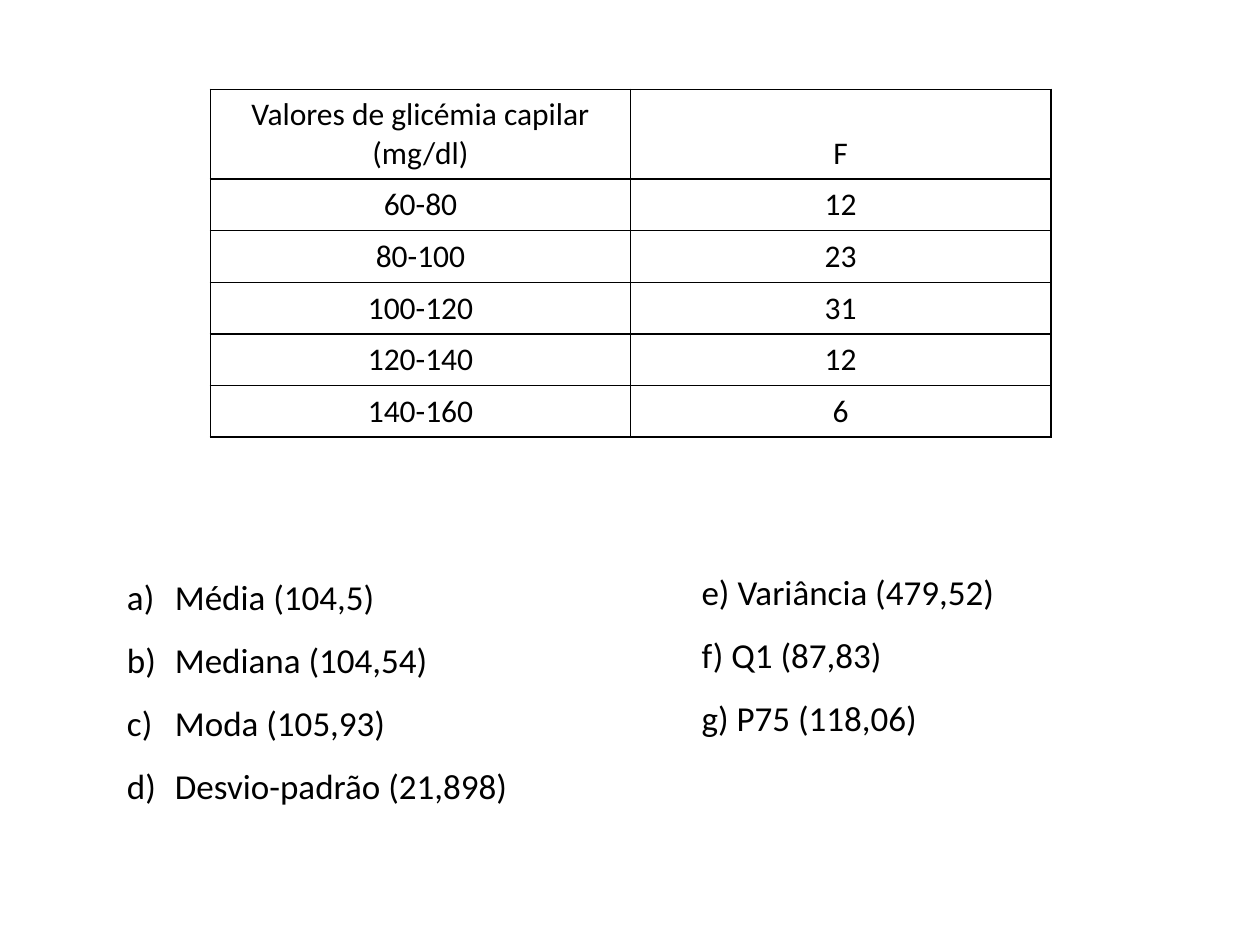
from lxml import etree
from pptx import Presentation
from pptx.dml.color import RGBColor
from pptx.enum.text import MSO_ANCHOR, MSO_AUTO_SIZE, PP_ALIGN
from pptx.oxml.ns import qn
from pptx.util import Inches, Pt

BLACK = RGBColor(0x00, 0x00, 0x00)
CENTER = PP_ALIGN.CENTER
LEFT = PP_ALIGN.LEFT
BOTTOM = MSO_ANCHOR.BOTTOM
GROW = MSO_AUTO_SIZE.SHAPE_TO_FIT_TEXT
BLANK_LAYOUT = 6

FREQUENCIES = [
    ("Valores de glicémia capilar (mg/dl)", "F"),
    ("60-80", "12"),
    ("80-100", "23"),
    ("100-120", "31"),
    ("120-140", "12"),
    ("140-160", "6"),
]
LETTERED_ANSWERS = [
    "Média (104,5)",
    "Mediana (104,54)",
    "Moda (105,93)",
    "Desvio-padrão (21,898)",
]
OTHER_ANSWERS = ["e) Variância (479,52)", "f) Q1 (87,83)", "g) P75 (118,06)"]


def write_text(para, text, size=18, align=LEFT, spacing=None, font="Calibri", color=BLACK):
    """Add formatted text to a paragraph."""
    para.alignment = align
    para.line_spacing = spacing
    span = para.add_run()
    span.text = text
    span.font.name = font
    span.font.size = Pt(size)
    span.font.color.rgb = color


class SlideBuilder:
    """Hold the style and the current slide, and add elements to it."""

    def __init__(self, page, border_color=BLACK, border_width=1, indent=0.38):
        self.page = page
        self.border_color = border_color
        self.border_width = border_width
        self.indent = indent

    def draw_borders(self, cell):
        """Draw a line on every side of a cell."""
        properties = cell._tc.get_or_add_tcPr()
        for side in ("a:lnL", "a:lnR", "a:lnT", "a:lnB"):
            line = etree.SubElement(properties, qn(side), w=str(Pt(self.border_width)))
            fill = etree.SubElement(line, qn("a:solidFill"))
            etree.SubElement(fill, qn("a:srgbClr"), val=str(self.border_color))

    def add_table(self, rows, left, top, width, header_height, row_height):
        """Add a bordered table with centred text."""
        height = header_height + row_height * (len(rows) - 1)
        frame = self.page.shapes.add_table(
            len(rows), len(rows[0]), Inches(left), Inches(top), Inches(width), Inches(height)
        )
        table = frame.table
        table.first_row = False
        table.horz_banding = False
        for row_index, values in enumerate(rows):
            table.rows[row_index].height = Inches(row_height if row_index else header_height)
            for column_index, value in enumerate(values):
                cell = table.cell(row_index, column_index)
                self.draw_borders(cell)
                cell.fill.background()
                cell.vertical_anchor = BOTTOM
                write_text(cell.text_frame.paragraphs[0], value, align=CENTER)

    def add_list(self, items, left, top, width, height, lettered=False):
        """Add a text box with one paragraph for each item."""
        box = self.page.shapes.add_textbox(
            Inches(left), Inches(top), Inches(width), Inches(height)
        )
        frame = box.text_frame
        frame.word_wrap = True
        frame.auto_size = GROW
        for index, item in enumerate(items):
            para = frame.add_paragraph() if index else frame.paragraphs[0]
            write_text(para, item, size=20, spacing=1.5)
            if lettered:
                self.add_letter(para)

    def add_letter(self, para):
        """Number a paragraph with a letter and a hanging indent."""
        properties = para._p.get_or_add_pPr()
        properties.set("marL", str(Inches(self.indent)))
        properties.set("indent", str(-Inches(self.indent)))
        etree.SubElement(properties, qn("a:buFont"), typeface="+mj-lt")
        etree.SubElement(properties, qn("a:buAutoNum"), type="alphaLcParenR")


def main():
    """Build the slide and save the deck."""
    deck = Presentation()
    deck.slide_width = Inches(10)
    deck.slide_height = Inches(7.5)
    page = deck.slides.add_slide(deck.slide_layouts[BLANK_LAYOUT])
    builder = SlideBuilder(page)
    builder.add_table(FREQUENCIES, 1.67, 0.71, 6.67, header_height=0.71, row_height=0.41)
    builder.add_list(LETTERED_ANSWERS, 0.91, 4.35, 4.13, 2.12, lettered=True)
    builder.add_list(OTHER_ANSWERS, 5.47, 4.31, 3.46, 1.62)
    deck.save("out.pptx")


if __name__ == "__main__":
    main()
